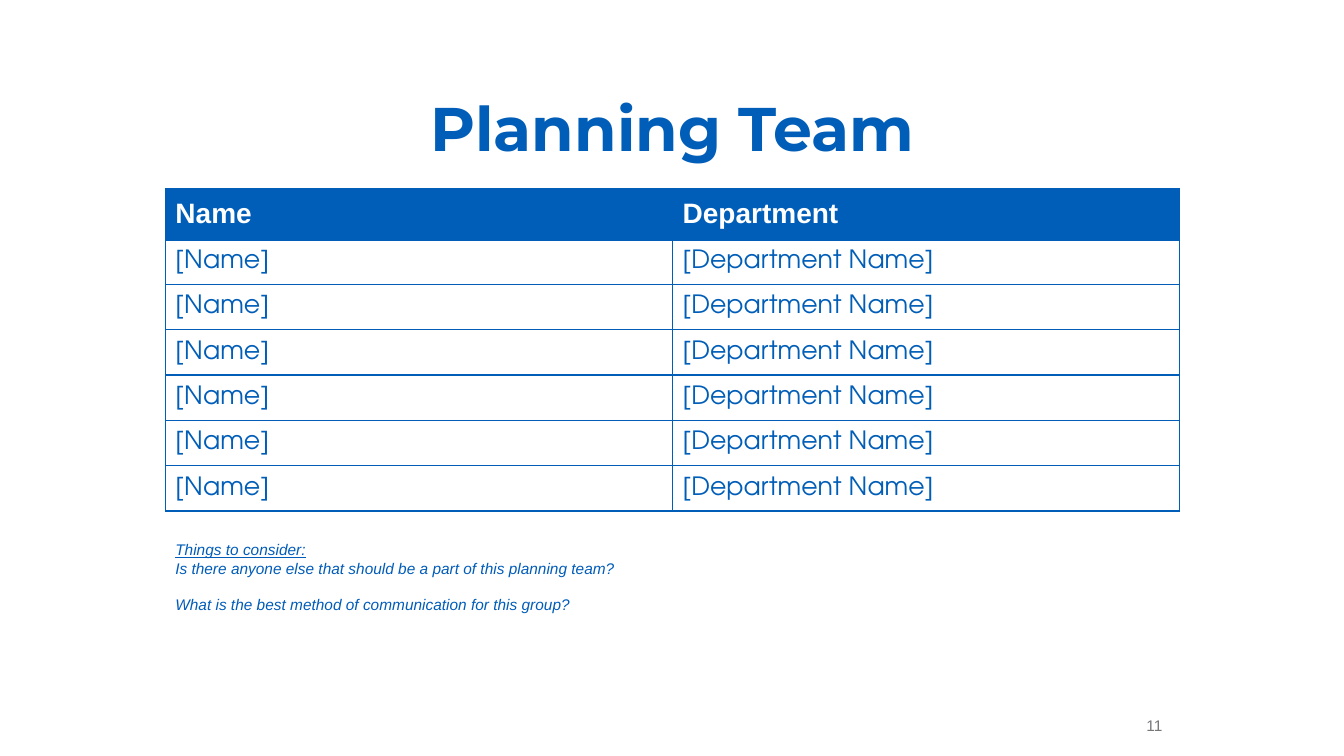
from lxml.etree import SubElement
from pptx import Presentation
from pptx.dml.color import RGBColor
from pptx.enum.text import MSO_ANCHOR, PP_ALIGN
from pptx.oxml.ns import qn
from pptx.util import Inches, Pt

TITLE = "Planning Team"
HEADER = ("Name", "Department")
TEAM = [("[Name]", "[Department Name]")] * 6
CONSIDERATIONS = [
    "Things to consider:",
    "Is there anyone else that should be a part of this planning team?",
    "What is the best method of communication for this group?",
]
PAGE_NUMBER = "11"

COLORS = {"blue": "005EB8", "note": "005CB9", "white": "FFFFFF", "gray": "77777A"}
HEADER_HEIGHT, ROW_HEIGHT = 0.5, 0.45
TABLE_LEFT, TABLE_TOP, TABLE_WIDTH = 1.64, 1.87, 10.06


def set_font(paragraph, name, size, color, bold=False, italic=False):
    font = paragraph.font
    font.name, font.size = name, Pt(size)
    font.bold, font.italic = bold, italic
    font.color.rgb = RGBColor.from_string(COLORS[color])


def add_text_frame(slide, left, top, width, height):
    box = slide.shapes.add_textbox(Inches(left), Inches(top), Inches(width), Inches(height))
    box.text_frame.word_wrap = True
    return box.text_frame


def set_borders(cell, bottom_width):
    properties = cell._tc.get_or_add_tcPr()
    for side, width in (("L", 1), ("R", 1), ("T", 1), ("B", bottom_width)):
        line = SubElement(properties, qn(f"a:ln{side}"), w=str(Pt(width)))
        fill = SubElement(line, qn("a:solidFill"))
        SubElement(fill, qn("a:srgbClr"), val=COLORS["blue"])


def add_team_table(slide):
    rows = [HEADER, *TEAM]
    height = HEADER_HEIGHT + ROW_HEIGHT * len(TEAM)
    table = slide.shapes.add_table(
        len(rows), len(HEADER), Inches(TABLE_LEFT), Inches(TABLE_TOP),
        Inches(TABLE_WIDTH), Inches(height)).table
    for column in table.columns:
        column.width = Inches(TABLE_WIDTH / len(HEADER))
    for r, row in enumerate(rows):
        is_header = r == 0
        table.rows[r].height = Inches(HEADER_HEIGHT if is_header else ROW_HEIGHT)
        for c, label in enumerate(row):
            cell = table.cell(r, c)
            cell.text = label
            cell.vertical_anchor = MSO_ANCHOR.MIDDLE
            set_borders(cell, 3 if is_header else 1)
            cell.fill.solid()
            cell.fill.fore_color.rgb = RGBColor.from_string(
                COLORS["blue" if is_header else "white"])
            paragraph = cell.text_frame.paragraphs[0]
            if is_header:
                set_font(paragraph, "Arial", 20, "white", bold=True)
            else:
                set_font(paragraph, "TeX Gyre Adventor", 18, "blue")


def main():
    presentation = Presentation()
    presentation.slide_width, presentation.slide_height = Inches(13.33), Inches(7.5)
    slide = presentation.slides.add_slide(presentation.slide_layouts[5])

    title = slide.shapes.title
    title.left, title.top = Inches(0.92), Inches(0.58)
    title.width, title.height = Inches(11.5), Inches(1.45)
    title.text_frame.text = TITLE
    title.text_frame.vertical_anchor = MSO_ANCHOR.MIDDLE
    heading = title.text_frame.paragraphs[0]
    heading.alignment = PP_ALIGN.CENTER
    heading.line_spacing = 0.9
    set_font(heading, "Montserrat", 44, "blue", bold=True)

    add_team_table(slide)

    notes = add_text_frame(slide, TABLE_LEFT, 5.31, 7.09, 0.84)
    notes.text = "\n".join(CONSIDERATIONS)
    for paragraph in notes.paragraphs:
        set_font(paragraph, "Arial", 11, "note", italic=True)
    notes.paragraphs[0].font.underline = True
    notes.paragraphs[-1].space_before = Pt(13)

    page = add_text_frame(slide, 11.18, 6.99, 0.54, 0.41)
    page.text = PAGE_NUMBER
    page.vertical_anchor = MSO_ANCHOR.MIDDLE
    page.paragraphs[0].alignment = PP_ALIGN.CENTER
    set_font(page.paragraphs[0], "Arial", 11, "gray")

    presentation.save("out.pptx")


if __name__ == "__main__":
    main()
